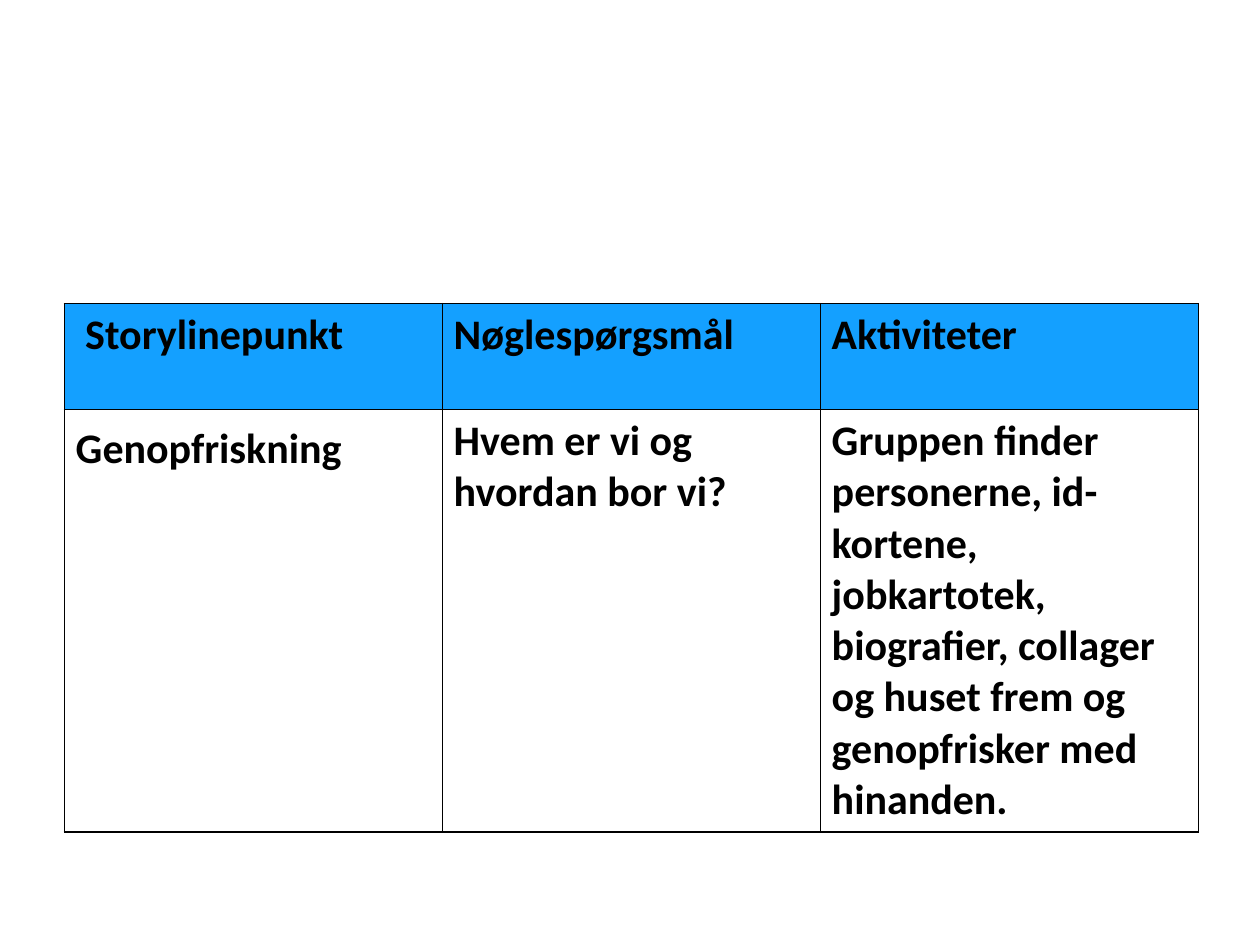
from lxml.etree import SubElement
from pptx import Presentation
from pptx.dml.color import RGBColor
from pptx.oxml.ns import qn
from pptx.util import Pt

BLACK = "000000"
HEADER_BLUE = "14A0FF"
HEADINGS = [" Storylinepunkt", "Nøglespørgsmål", "Aktiviteter"]
STORYLINE = [
    "Genopfriskning",
    "Hvem er vi og hvordan bor vi?",
    "Gruppen finder personerne, id-kortene, jobkartotek, biografier, "
    "collager og huset frem og genopfrisker med hinanden.",
]
MARGINS = {
    "margin_left": Pt(6.5),
    "margin_right": Pt(6.5),
    "margin_top": Pt(3.6),
    "margin_bottom": Pt(3.6),
}
LETTERING = {"name": "Calibri", "size": Pt(24), "bold": True}


def color(hex_code):
    return RGBColor.from_string(hex_code)


def apply_format(target, values):
    for attribute, value in values.items():
        setattr(target, attribute, value)


def add_borders(cell):
    properties = cell._tc.get_or_add_tcPr()
    for position, side in enumerate(("lnL", "lnR", "lnT", "lnB")):
        border = properties.makeelement(qn(f"a:{side}"), {"w": str(Pt(1))})
        solid = SubElement(border, qn("a:solidFill"))
        SubElement(solid, qn("a:srgbClr"), val=BLACK)
        properties.insert(position, border)


def fill_cell(cell, wording, background=None):
    apply_format(cell, MARGINS)
    if background:
        cell.fill.solid()
        cell.fill.fore_color.rgb = color(background)
    else:
        cell.fill.background()
    add_borders(cell)
    run = cell.text_frame.paragraphs[0].add_run()
    run.text = wording
    apply_format(run.font, LETTERING)
    run.font.color.rgb = color(BLACK)


def add_storyline_table(slide, left, top, width, height, header_height):
    table = slide.shapes.add_table(
        2, len(HEADINGS), Pt(left), Pt(top), Pt(width), Pt(height)
    ).table
    table.rows[0].height = Pt(header_height)
    table.rows[1].height = Pt(height - header_height)
    for column, (heading, entry) in enumerate(zip(HEADINGS, STORYLINE)):
        table.columns[column].width = Pt(width / len(HEADINGS))
        fill_cell(table.cell(0, column), heading, HEADER_BLUE)
        fill_cell(table.cell(1, column), entry)
    table.cell(1, 0).text_frame.paragraphs[0].line_spacing = 1.15


def main():
    presentation = Presentation()
    presentation.slide_width = Pt(720)
    presentation.slide_height = Pt(540)
    slide = presentation.slides.add_slide(presentation.slide_layouts[6])
    add_storyline_table(slide, 36.8, 173.5, 648, 298, 60.5)
    presentation.save("out.pptx")


if __name__ == "__main__":
    main()
